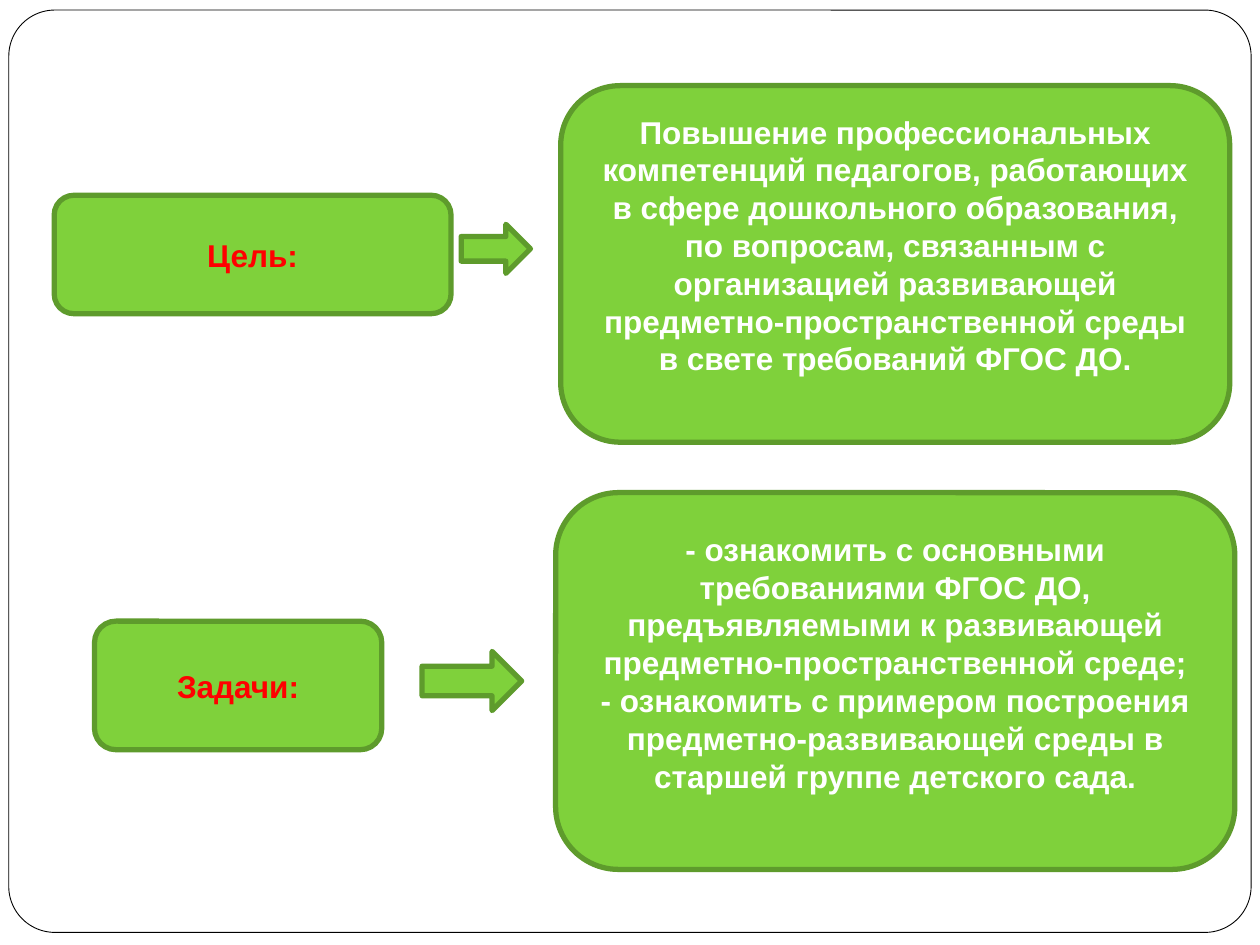
from pptx import Presentation
from pptx import util as u
from pptx.dml import color
from pptx.enum import shapes, text

WHITE = color.RGBColor(0xFF, 0xFF, 0xFF)
BLACK = color.RGBColor(0x00, 0x00, 0x00)
RED = color.RGBColor(0xFF, 0x00, 0x00)
GREEN = color.RGBColor(0x7F, 0xD1, 0x3B)
DARK_GREEN = color.RGBColor(0x5E, 0x9B, 0x2C)

GOAL = (
    "Повышение профессиональных компетенций педагогов, работающих в сфере "
    "дошкольного образования, по вопросам, связанным с организацией развивающей "
    "предметно-пространственной среды в свете требований ФГОС ДО.",
)
TASKS = (
    "- ознакомить с основными требованиями ФГОС ДО, предъявляемыми к развивающей "
    "предметно-пространственной среде;",
    "- ознакомить с примером построения предметно-развивающей среды в старшей "
    "группе детского сада.",
)


class GoalSlide:
    font_name = "Arial"
    font_size = u.Pt(18)
    outline_width = u.Pt(3)

    def __init__(self, slide):
        self.slide = slide

    def shape(self, kind, box, fill=GREEN, outline=DARK_GREEN, width=outline_width):
        shape = self.slide.shapes.add_shape(kind, *(u.Inches(side) for side in box))
        shape.shadow.inherit = False
        shape.fill.solid()
        shape.fill.fore_color.rgb = fill
        shape.line.color.rgb = outline
        shape.line.width = width
        return shape

    def frame(self, box):
        border = self.shape(shapes.MSO_SHAPE.ROUNDED_RECTANGLE, box, WHITE, BLACK, u.Pt(0.5))
        border.adjustments[0] = 0.05

    def card(self, box, lines, ink, bottom=0.05):
        body = self.shape(shapes.MSO_SHAPE.ROUNDED_RECTANGLE, box).text_frame
        body.word_wrap = True
        body.vertical_anchor = text.MSO_ANCHOR.MIDDLE
        body.margin_bottom = u.Inches(bottom)
        paragraph = body.paragraphs[0]
        paragraph.alignment = text.PP_ALIGN.CENTER
        for index, line in enumerate(lines):
            if index:
                paragraph.add_line_break()
            run = paragraph.add_run()
            run.text = line
            run.font.name = self.font_name
            run.font.size = self.font_size
            run.font.bold = True
            run.font.color.rgb = ink

    def label(self, box, caption):
        self.card(box, (caption,), RED)

    def statement(self, box, lines):
        self.card(box, lines, WHITE, bottom=0.35)

    def arrow(self, box):
        self.shape(shapes.MSO_SHAPE.RIGHT_ARROW, box)


def main():
    deck = Presentation()
    deck.slide_width = u.Inches(10)
    deck.slide_height = u.Inches(7.5)
    page = GoalSlide(deck.slides.add_slide(deck.slide_layouts[6]))

    page.frame((0.07, 0.08, 9.86, 7.32))

    page.label((0.43, 1.55, 3.15, 0.94), "Цель:")
    page.statement((4.45, 0.68, 5.31, 2.83), GOAL)
    page.arrow((3.66, 1.78, 0.55, 0.39))

    page.statement((4.41, 3.91, 5.39, 2.99), TASKS)
    page.label((0.75, 4.93, 2.28, 1.02), "Задачи:")
    page.arrow((3.35, 5.17, 0.79, 0.47))

    deck.save("out.pptx")


if __name__ == "__main__":
    main()
